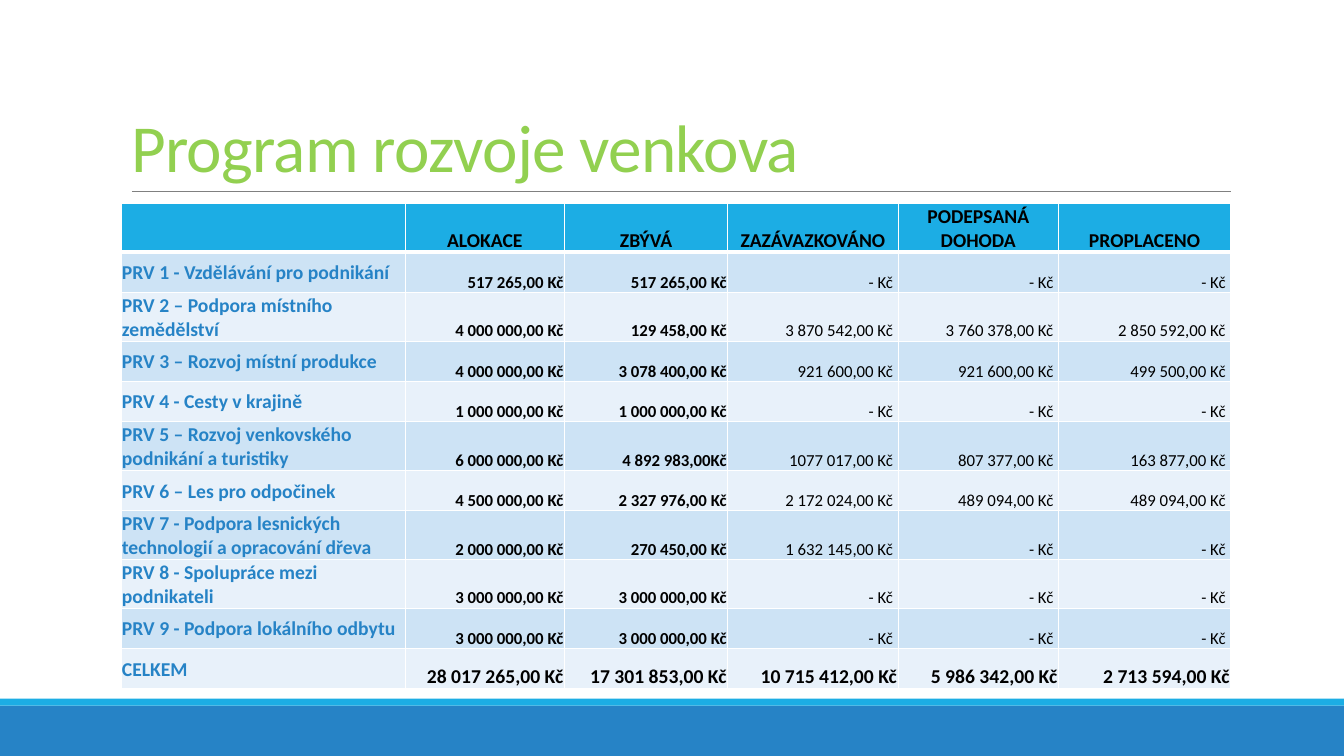
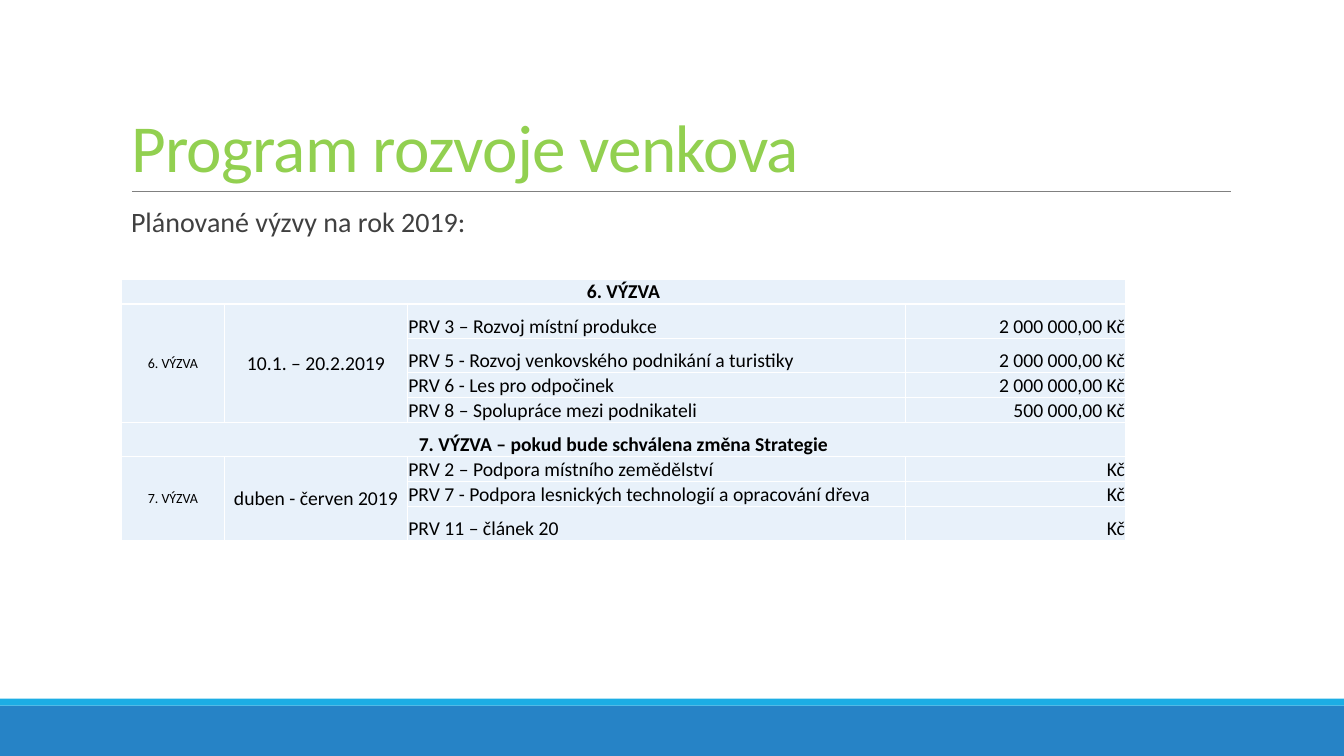
import pptx
import pptx.dml.color
import pptx.enum.shapes
import pptx.enum.text
import pptx.oxml
import pptx.oxml.ns
import pptx.oxml.xmlchemy
import pptx.util

SLIDE_W, SLIDE_H = 13.33, 7.5
FONT = "Calibri"
GREEN, BLUE, CYAN = "92D050", "2683C6", "1CADE4"
BLACK, DARK, GREY, WHITE = "000000", "404040", "808080", "FFFFFF"
BAND_DARK, BAND_LIGHT = "CDE3F5", "E8F1FA"
TITLE = "Program rozvoje venkova"

ALIGN = pptx.enum.text.PP_ALIGN
ANCHOR = pptx.enum.text.MSO_ANCHOR

# Positions and sizes are percentages of the slide's width and height.
LEFT, WIDTH = 9, 82.5
CONTENT_TOP = 26.93
ONE_LINE, TWO_LINES = 5.33, 6.27
CALL_SHORT, CALL_TALL = 3.2, 4.53

NONE = "- Kč"
BUDGET_COLS = [21.15, 11.85, 12.15, 12.68, 11.93, 12.82]
BUDGET_HEAD = ["", "ALOKACE", "ZBÝVÁ", "ZAZÁVAZKOVÁNO", "PODEPSANÁ DOHODA", "PROPLACENO"]
BUDGET = [
    (ONE_LINE, "PRV 1 - Vzdělávání pro podnikání",
     "517 265,00 Kč", "517 265,00 Kč", NONE, NONE, NONE),
    (TWO_LINES, "PRV 2 – Podpora místního zemědělství",
     "4 000 000,00 Kč", "129 458,00 Kč", "3 870 542,00 Kč", "3 760 378,00 Kč", "2 850 592,00 Kč"),
    (ONE_LINE, "PRV 3 – Rozvoj místní produkce",
     "4 000 000,00 Kč", "3 078 400,00 Kč", "921 600,00 Kč", "921 600,00 Kč", "499 500,00 Kč"),
    (ONE_LINE, "PRV 4 - Cesty v krajině",
     "1 000 000,00 Kč", "1 000 000,00 Kč", NONE, NONE, NONE),
    (TWO_LINES, "PRV 5 – Rozvoj venkovského podnikání a turistiky",
     "6 000 000,00 Kč", "4 892 983,00Kč", "1077 017,00 Kč", "807 377,00 Kč", "163 877,00 Kč"),
    (ONE_LINE, "PRV 6 – Les pro odpočinek",
     "4 500 000,00 Kč", "2 327 976,00 Kč", "2 172 024,00 Kč", "489 094,00 Kč", "489 094,00 Kč"),
    (TWO_LINES, "PRV 7 - Podpora lesnických technologií a opracování dřeva",
     "2 000 000,00 Kč", "270 450,00 Kč", "1 632 145,00 Kč", NONE, NONE),
    (TWO_LINES, "PRV 8 - Spolupráce mezi podnikateli",
     "3 000 000,00 Kč", "3 000 000,00 Kč", NONE, NONE, NONE),
    (ONE_LINE, "PRV 9 - Podpora lokálního odbytu",
     "3 000 000,00 Kč", "3 000 000,00 Kč", NONE, NONE, NONE),
    (ONE_LINE, "CELKEM",
     "28 017 265,00 Kč", "17 301 853,00 Kč", "10 715 412,00 Kč", "5 986 342,00 Kč", "2 713 594,00 Kč"),
]

CALL_COLS = [7.73, 13.58, 37.05, 16.43]
CALLS = [
    ("6. VÝZVA", CALL_SHORT, "6. VÝZVA", "10.1. – 20.2.2019", [
        (CALL_TALL, "PRV 3 – Rozvoj místní produkce", "2 000 000,00 Kč"),
        (CALL_TALL, "PRV 5 - Rozvoj venkovského podnikání a turistiky", "2 000 000,00 Kč"),
        (CALL_SHORT, "PRV 6 - Les pro odpočinek", "2 000 000,00 Kč"),
        (CALL_SHORT, "PRV 8 – Spolupráce mezi podnikateli", "500 000,00 Kč"),
    ]),
    ("7. VÝZVA – pokud bude schválena změna Strategie", CALL_TALL, "7. VÝZVA", "duben - červen 2019", [
        (CALL_SHORT, "PRV 2 – Podpora místního zemědělství", "Kč"),
        (CALL_SHORT, "PRV 7 - Podpora lesnických technologií a opracování dřeva", "Kč"),
        (CALL_TALL, "PRV 11 – článek 20", "Kč"),
    ]),
]


def across(percent):
    return pptx.util.Inches(SLIDE_W * percent / 100)


def down(percent):
    return pptx.util.Inches(SLIDE_H * percent / 100)


def rgb(color):
    return pptx.dml.color.RGBColor.from_string(color)


def place(sp, left, top, width, height):
    sp.left, sp.top = across(left), down(top)
    sp.width, sp.height = across(width), down(height)


def write(tf, text, size=14, color=BLACK, bold=False, align=ALIGN.LEFT,
          line_spacing=None, before=None, after=None, tracking=None):
    """Put one formatted paragraph in a text frame and return it."""
    p = tf.paragraphs[0]
    p.alignment, p.line_spacing = align, line_spacing
    if before is not None:
        p.space_before = pptx.util.Pt(before)
    if after is not None:
        p.space_after = pptx.util.Pt(after)
    r = p.add_run()
    r.text = text
    r.font.name, r.font.size, r.font.bold = FONT, pptx.util.Pt(size), bold
    r.font.color.rgb = rgb(color)
    if tracking is not None:
        r.font._element.set("spc", str(int(tracking * 100)))
    return p


def add_band(slide, top, height, color):
    sp = slide.shapes.add_shape(pptx.enum.shapes.MSO_SHAPE.RECTANGLE,
                                0, down(top), across(100), down(height))
    sp.shadow.inherit = False
    sp.fill.solid()
    sp.fill.fore_color.rgb = rgb(color)
    sp.line.fill.background()
    return sp


def add_rule(slide, left, right, y):
    sp = slide.shapes.add_connector(pptx.enum.shapes.MSO_CONNECTOR.STRAIGHT,
                                    across(left), down(y), across(right), down(y))
    sp.line.color.rgb = rgb(GREY)
    sp.line.width = pptx.util.Pt(0.5)
    sp.element.spPr.append(pptx.oxml.xmlchemy.OxmlElement("a:effectLst"))
    return sp


def furnish_layout(layout, slide):
    """Draw the shared bands and rule on a slide, then move them to its layout."""
    furniture = [
        add_band(slide, 93.33, 6.67, BLUE),
        add_band(slide, 92.4, 0.93, CYAN),
        add_rule(slide, 9.82, 91.58, 25.33),
    ]
    for i, sp in enumerate(furniture):
        layout.shapes.element.insert(2 + i, sp.element)
    title = layout.placeholders[0]
    place(title, LEFT, 4.13, WIDTH, 21.2)
    title.text_frame.vertical_anchor = ANCHOR.BOTTOM
    title.text_frame.auto_size = pptx.enum.text.MSO_AUTO_SIZE.NONE


def set_title(slide):
    write(slide.shapes.title.text_frame, TITLE, size=48, color=GREEN,
          line_spacing=0.85, tracking=-0.5)


def set_lead(slide, text):
    body = slide.placeholders[1]
    place(body, LEFT, CONTENT_TOP, WIDTH, 58.67)
    tf = body.text_frame
    tf.auto_size = pptx.enum.text.MSO_AUTO_SIZE.NONE
    tf.margin_left = tf.margin_right = 0
    p = write(tf, text, size=20, color=DARK, line_spacing=0.9, before=12, after=2)
    pPr = p._p.get_or_add_pPr()
    pPr.set("marL", str(pptx.util.Inches(0.1)))
    pPr.set("indent", "0")
    pPr.append(pptx.oxml.xmlchemy.OxmlElement("a:buNone"))


def add_table(slide, top, cols, rows):
    shape = slide.shapes.add_table(len(rows), len(cols), across(LEFT), down(top),
                                   across(sum(cols)), down(sum(rows)))
    table = shape.table
    table.first_row = table.horz_banding = False
    for column, width in zip(table.columns, cols):
        column.width = across(width)
    for row, height in zip(table.rows, rows):
        row.height = down(height)
    return table


def style_cell(cell, fill, top=1, bottom=1):
    """Fill a cell and give it white borders, widths in points."""
    cell.fill.solid()
    cell.fill.fore_color.rgb = rgb(fill)
    tcPr = cell._tc.get_or_add_tcPr()
    for i, (side, width) in enumerate([("L", 1), ("R", 1), ("T", top), ("B", bottom)]):
        ln = pptx.oxml.parse_xml(
            f'<a:ln{side} {pptx.oxml.ns.nsdecls("a")} w="{pptx.util.Pt(width)}">'
            f'<a:solidFill><a:srgbClr val="{WHITE}"/></a:solidFill></a:ln{side}>')
        tcPr.insert(i, ln)


def fill_cell(cell, text, anchor=ANCHOR.BOTTOM, right=0.01, **fmt):
    cell.margin_left = cell.margin_top = pptx.util.Inches(0.01)
    cell.margin_right, cell.margin_bottom = pptx.util.Inches(right), 0
    cell.vertical_anchor = anchor
    if text:
        write(cell.text_frame, text, **fmt)


def build_budget(slide):
    table = add_table(slide, CONTENT_TOP, BUDGET_COLS, [TWO_LINES] + [row[0] for row in BUDGET])
    for c, text in enumerate(BUDGET_HEAD):
        style_cell(table.cell(0, c), CYAN, bottom=3)
        fill_cell(table.cell(0, c), text, bold=True, align=ALIGN.CENTER)
    for r, (_, name, *amounts) in enumerate(BUDGET, 1):
        total = r == len(BUDGET)
        for c in range(len(BUDGET_COLS)):
            style_cell(table.cell(r, c), BAND_DARK if r % 2 else BAND_LIGHT,
                       top=3 if r == 1 else 1)
        fill_cell(table.cell(r, 0), name, anchor=ANCHOR.MIDDLE, color=BLUE, bold=True)
        for c, amount in enumerate(amounts, 1):
            strong = total or c <= 2
            fill_cell(table.cell(r, c), amount, right=0.01 if strong else 0.05,
                      size=14 if total else 12, bold=strong, align=ALIGN.RIGHT)


def build_calls(slide):
    heights = []
    for _, head_height, _, _, items in CALLS:
        heights += [head_height] + [item[0] for item in items]
    table = add_table(slide, 36.93, CALL_COLS, heights)
    for cell in table.iter_cells():
        style_cell(cell, BAND_LIGHT)
    top = 0
    for heading, _, label, period, items in CALLS:
        first, last = top + 1, top + len(items)
        table.cell(top, 0).merge(table.cell(top, len(CALL_COLS) - 1))
        fill_cell(table.cell(top, 0), heading, bold=True, align=ALIGN.CENTER)
        for c, (text, size) in enumerate([(label, 10), (period, 14)]):
            table.cell(first, c).merge(table.cell(last, c))
            fill_cell(table.cell(first, c), text, anchor=ANCHOR.MIDDLE,
                      size=size, align=ALIGN.CENTER)
        for r, (_, name, amount) in enumerate(items, first):
            fill_cell(table.cell(r, 2), name)
            fill_cell(table.cell(r, 3), amount, align=ALIGN.RIGHT)
        top = last + 1


def main():
    prs = pptx.Presentation()
    prs.slide_width, prs.slide_height = across(100), down(100)
    layout = prs.slide_layouts[1]
    budget, calls = [prs.slides.add_slide(layout) for _ in range(2)]
    furnish_layout(layout, budget)
    for slide in (budget, calls):
        set_title(slide)

    body = budget.placeholders[1].element
    body.getparent().remove(body)
    build_budget(budget)

    set_lead(calls, "Plánované výzvy na rok 2019:")
    build_calls(calls)
    prs.save("out.pptx")


if __name__ == "__main__":
    main()
